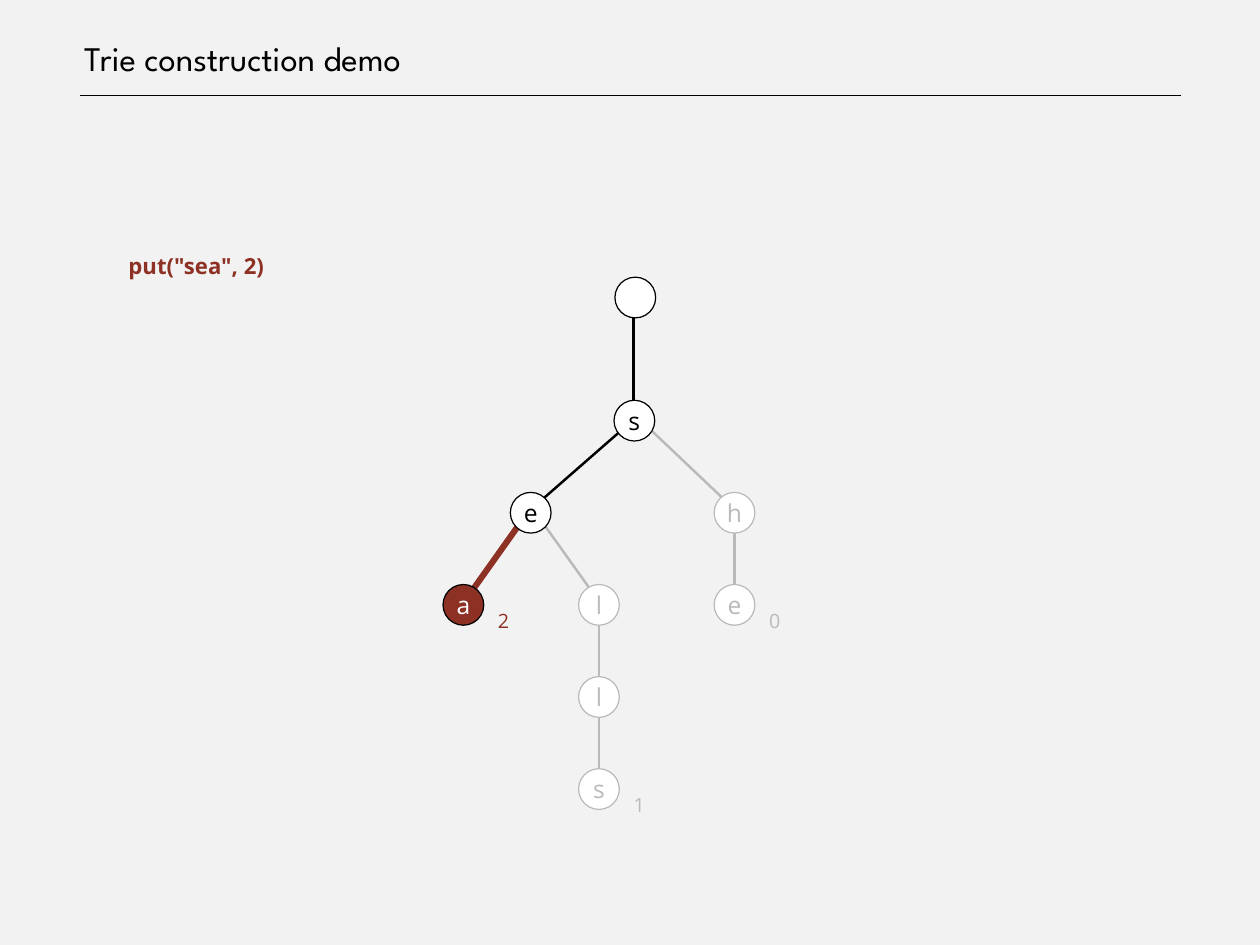
import dataclasses

import pptx
import pptx.dml.color
import pptx.enum.shapes
import pptx.enum.text
import pptx.oxml
import pptx.oxml.ns
import pptx.shapes.autoshape
import pptx.slide
import pptx.text.text
import pptx.util

BACKGROUND = pptx.dml.color.RGBColor(0xF2, 0xF2, 0xF2)
BLACK = pptx.dml.color.RGBColor(0x00, 0x00, 0x00)
WHITE = pptx.dml.color.RGBColor(0xFF, 0xFF, 0xFF)
GRAY = pptx.dml.color.RGBColor(0xBA, 0xBA, 0xBA)
RED = pptx.dml.color.RGBColor(0x8D, 0x31, 0x24)

BODY_FONT = "Open Sans"
TITLE_FONT = "League Spartan"
NODE_SIZE = 0.46
FIRST_LEVEL_TOP = 4.52
LEVEL_STEP = 1.04
VALUE_OFFSET = (0.5, 0.08)


@dataclasses.dataclass(frozen=True)
class Node:
    letter: str
    left: float
    top: float
    color: pptx.dml.color.RGBColor
    outline: pptx.dml.color.RGBColor
    fill: pptx.dml.color.RGBColor = WHITE
    value: str = ""
    value_color: pptx.dml.color.RGBColor = GRAY


@dataclasses.dataclass(frozen=True)
class Line:
    start: tuple[float, float]
    end: tuple[float, float]
    color: pptx.dml.color.RGBColor = GRAY
    width: float = 2


def level_top(level: int) -> float:
    return FIRST_LEVEL_TOP + LEVEL_STEP * level


NODES = [
    Node("h", 8.06, level_top(1), GRAY, GRAY),
    Node("e", 8.06, level_top(2), GRAY, GRAY, value="0"),
    Node("a", 5, level_top(2), WHITE, BLACK, RED, "2", RED),
    Node("l", 6.53, level_top(2), GRAY, GRAY),
    Node("l", 6.53, level_top(3), GRAY, GRAY),
    Node("s", 6.53, level_top(4), GRAY, GRAY, value="1"),
    Node("e", 5.76, level_top(1), BLACK, BLACK),
    Node("s", 6.93, level_top(0), BLACK, BLACK),
    Node("", 6.94, 3.13, BLACK, BLACK),
]

LINES = [
    Line((0.9, 1.08), (13.33, 1.08), BLACK, 1),
    Line((8.33, 5.79), (7.14, 4.66)),
    Line((8.29, 6.75), (8.29, 5.61)),
    Line((5.25, 6.78), (6.06, 5.64), RED, 5),
    Line((6.73, 6.75), (5.96, 5.67)),
    Line((6.76, 8.98), (6.76, 7.72)),
    Line((6.76, 7.87), (6.76, 6.61)),
    Line((6.12, 5.64), (7.08, 4.8), BLACK),
    Line((7.15, 4.68), (7.15, 3.44), BLACK),
]


def write_text(
    frame: pptx.text.text.TextFrame,
    text: str,
    *,
    size: float,
    color: pptx.dml.color.RGBColor,
    font: str = BODY_FONT,
    bold: bool = False,
    alignment: pptx.enum.text.PP_ALIGN = pptx.enum.text.PP_ALIGN.LEFT,
    anchor: pptx.enum.text.MSO_ANCHOR = pptx.enum.text.MSO_ANCHOR.TOP,
    line_spacing: float = 1.0,
    insets: tuple[float, float, float, float] = (0, 0, 0, 0),
) -> None:
    frame.word_wrap = True
    frame.vertical_anchor = anchor
    (
        frame.margin_left,
        frame.margin_top,
        frame.margin_right,
        frame.margin_bottom,
    ) = (pptx.util.Inches(inset) for inset in insets)
    paragraph = frame.paragraphs[0]
    paragraph.alignment = alignment
    paragraph.line_spacing = line_spacing
    run = paragraph.add_run()
    run.text = text
    run.font.name = font
    run.font.size = pptx.util.Pt(size)
    run.font.bold = bold
    run.font.color.rgb = color


def add_text_box(
    slide: pptx.slide.Slide, left: float, top: float, width: float, height: float
) -> pptx.text.text.TextFrame:
    box = slide.shapes.add_textbox(
        *(pptx.util.Inches(length) for length in (left, top, width, height))
    )
    return box.text_frame


def draw_label(
    slide: pptx.slide.Slide,
    text: str,
    bounds: tuple[float, float, float, float],
    size: float,
    color: pptx.dml.color.RGBColor,
    bold: bool = False,
) -> None:
    write_text(
        add_text_box(slide, *bounds),
        text,
        size=size,
        color=color,
        bold=bold,
        line_spacing=1.5,
        insets=(0.12, 0.06, 0.06, 0.06),
    )


def draw_line(slide: pptx.slide.Slide, line: Line) -> None:
    connector = slide.shapes.add_connector(
        pptx.enum.shapes.MSO_CONNECTOR.STRAIGHT,
        *(pptx.util.Inches(length) for length in line.start + line.end),
    )
    connector.line.color.rgb = line.color
    connector.line.width = pptx.util.Pt(line.width)
    properties = connector.element.find(pptx.oxml.ns.qn("p:spPr"))
    properties.append(
        pptx.oxml.parse_xml(f"<a:effectLst {pptx.oxml.ns.nsdecls('a')}/>")
    )


def draw_node(slide: pptx.slide.Slide, node: Node) -> None:
    shape = slide.shapes.add_shape(
        pptx.enum.shapes.MSO_SHAPE.OVAL,
        *(
            pptx.util.Inches(length)
            for length in (node.left, node.top, NODE_SIZE, NODE_SIZE)
        ),
    )
    shape.shadow.inherit = False
    shape.fill.solid()
    shape.fill.fore_color.rgb = node.fill
    shape.line.color.rgb = node.outline
    shape.line.width = pptx.util.Pt(1)
    if node.letter:
        write_text(
            shape.text_frame,
            node.letter,
            size=20,
            color=node.color,
            alignment=pptx.enum.text.PP_ALIGN.CENTER,
            anchor=pptx.enum.text.MSO_ANCHOR.MIDDLE,
        )
    if node.value:
        right, down = VALUE_OFFSET
        bounds = (node.left + right, node.top + down, 0.33, 0.38)
        draw_label(slide, node.value, bounds, 16, node.value_color)


def main() -> None:
    presentation = pptx.Presentation()
    presentation.slide_width = pptx.util.Inches(14.22)
    presentation.slide_height = pptx.util.Inches(10.67)
    slide = presentation.slides.add_slide(presentation.slide_layouts[6])
    slide.background.fill.solid()
    slide.background.fill.fore_color.rgb = BACKGROUND

    write_text(
        add_text_box(slide, 0.89, 0, 12.44, 0.89),
        "Trie construction demo",
        size=28,
        color=BLACK,
        font=TITLE_FONT,
        anchor=pptx.enum.text.MSO_ANCHOR.BOTTOM,
        insets=(0.06, 0, 0, 0),
    )
    draw_label(slide, 'put("sea", 2)', (1.33, 2.64, 1.78, 0.4), 18, RED, bold=True)
    for line in LINES:
        draw_line(slide, line)
    for node in NODES:
        draw_node(slide, node)
    presentation.save("out.pptx")


if __name__ == "__main__":
    main()
